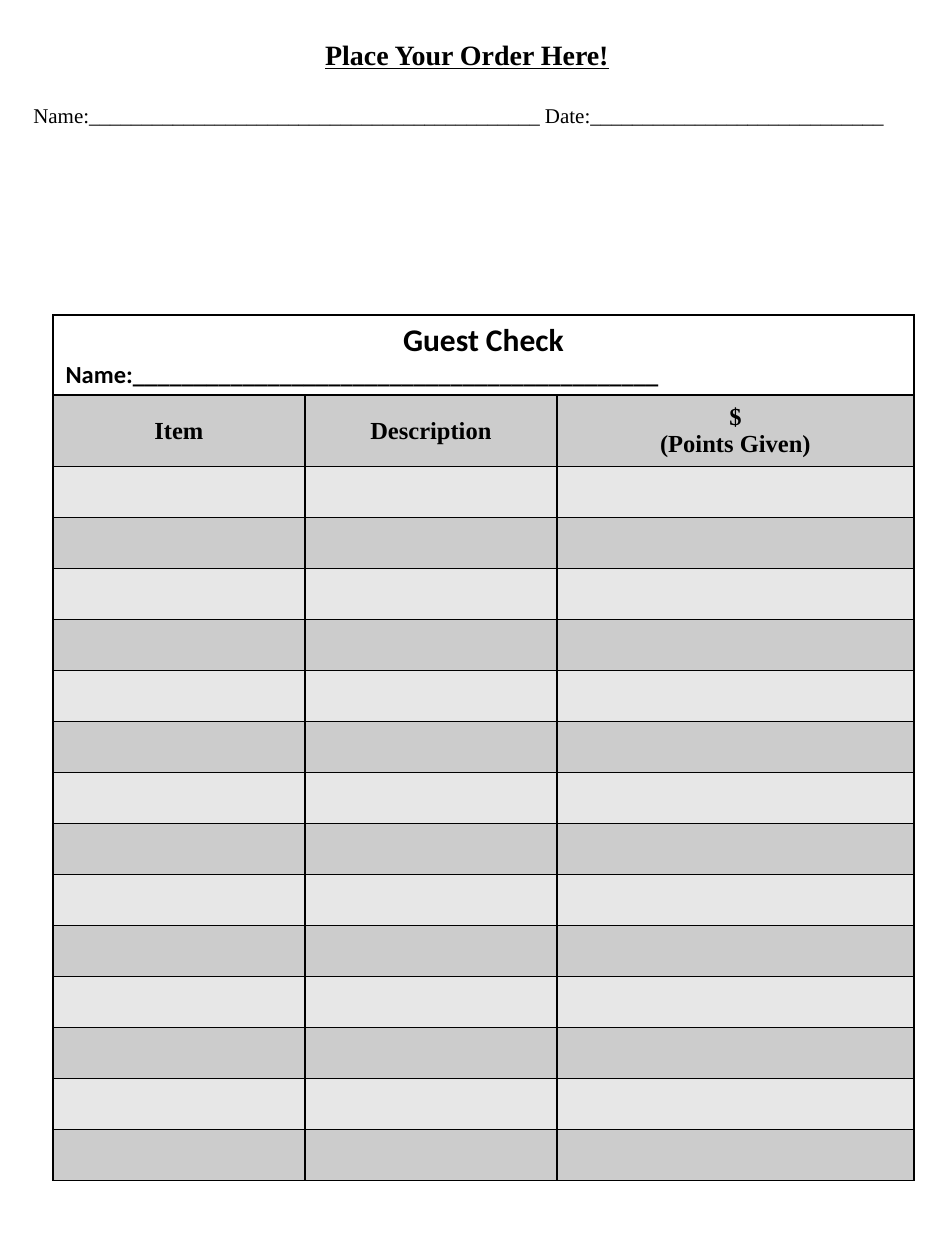
from dataclasses import dataclass

from lxml import etree
from pptx import Presentation, util as u
from pptx.dml.color import RGBColor
from pptx.enum import text
from pptx.oxml.ns import qn

PX_PER_INCH = 126
COLOURS = {"ink": "000000", "paper": "FFFFFF", "dark": "CCCCCC", "light": "E7E7E7"}
SERIF, SANS = "Times New Roman", "Calibri"
LEFT, CENTER = text.PP_ALIGN.LEFT, text.PP_ALIGN.CENTER

COLUMN_WIDTHS = [252, 252, 357]
TITLE_HEIGHT, HEADING_HEIGHT, ENTRY_HEIGHT = 80, 71, 51
ENTRY_COUNT = 14
NAME_LINE = "Name:" + "_" * 43
DATE_LINE = "Date:" + "_" * 28


@dataclass
class Row:
    height: int
    fill: str


def px(length: int) -> u.Emu:
    return u.Inches(length / PX_PER_INCH)


def write(para, wording: str, *, size: int, font: str = SERIF, bold: bool = True,
          underline: bool = False, align=CENTER, before: float = 0) -> None:
    para.alignment = align
    para.space_before = u.Pt(before)
    span = para.add_run()
    span.text = wording
    span.font.name = font
    span.font.size = u.Pt(size)
    span.font.bold = bold
    span.font.underline = underline
    span.font.color.rgb = RGBColor.from_string(COLOURS["ink"])


def style_cell(cell, fill: str) -> None:
    """Give a cell its fill and a thin border on every side."""
    properties = cell._tc.get_or_add_tcPr()
    for side in ("lnL", "lnR", "lnT", "lnB"):
        line = etree.SubElement(properties, qn(f"a:{side}"), w=str(u.Pt(1)))
        solid = etree.SubElement(line, qn("a:solidFill"))
        etree.SubElement(solid, qn("a:srgbClr"), val=COLOURS["ink"])
    cell.fill.solid()
    cell.fill.fore_color.rgb = RGBColor.from_string(COLOURS[fill])
    cell.vertical_anchor = text.MSO_ANCHOR.MIDDLE


def add_heading(page) -> None:
    box = page.shapes.add_textbox(px(21), px(31), px(892), px(208))
    frame = box.text_frame
    frame.word_wrap = True
    write(frame.paragraphs[0], "Place Your Order Here!", size=16, underline=True)
    write(frame.add_paragraph(), f"{NAME_LINE} {DATE_LINE}", size=12, bold=False,
          align=LEFT, before=18.4)


def add_guest_check(page) -> None:
    rows = [Row(TITLE_HEIGHT, "paper"), Row(HEADING_HEIGHT, "dark")]
    rows += [Row(ENTRY_HEIGHT, "dark" if i % 2 else "light") for i in range(ENTRY_COUNT)]
    table = page.shapes.add_table(
        len(rows), len(COLUMN_WIDTHS), px(53), px(315),
        px(sum(COLUMN_WIDTHS)), px(sum(row.height for row in rows))).table
    table.first_row = False
    table.horz_banding = False
    for column, width in zip(table.columns, COLUMN_WIDTHS):
        column.width = px(width)
    for table_row, row in zip(table.rows, rows):
        table_row.height = px(row.height)
        for cell in table_row.cells:
            style_cell(cell, row.fill)

    title = table.cell(0, 0)
    title.merge(table.cell(0, len(COLUMN_WIDTHS) - 1))
    write(title.text_frame.paragraphs[0], "Guest Check", size=18, font=SANS)
    write(title.text_frame.add_paragraph(), NAME_LINE, size=14, font=SANS, align=LEFT)

    for column, heading in enumerate(["Item", "Description", "$"]):
        write(table.cell(1, column).text_frame.paragraphs[0], heading, size=14)
    write(table.cell(1, 2).text_frame.add_paragraph(), "(Points Given)", size=14)


def main() -> None:
    deck = Presentation()
    deck.slide_width, deck.slide_height = px(945), px(1260)
    page = deck.slides.add_slide(deck.slide_layouts[6])
    add_heading(page)
    add_guest_check(page)
    deck.save("out.pptx")


if __name__ == "__main__":
    main()
